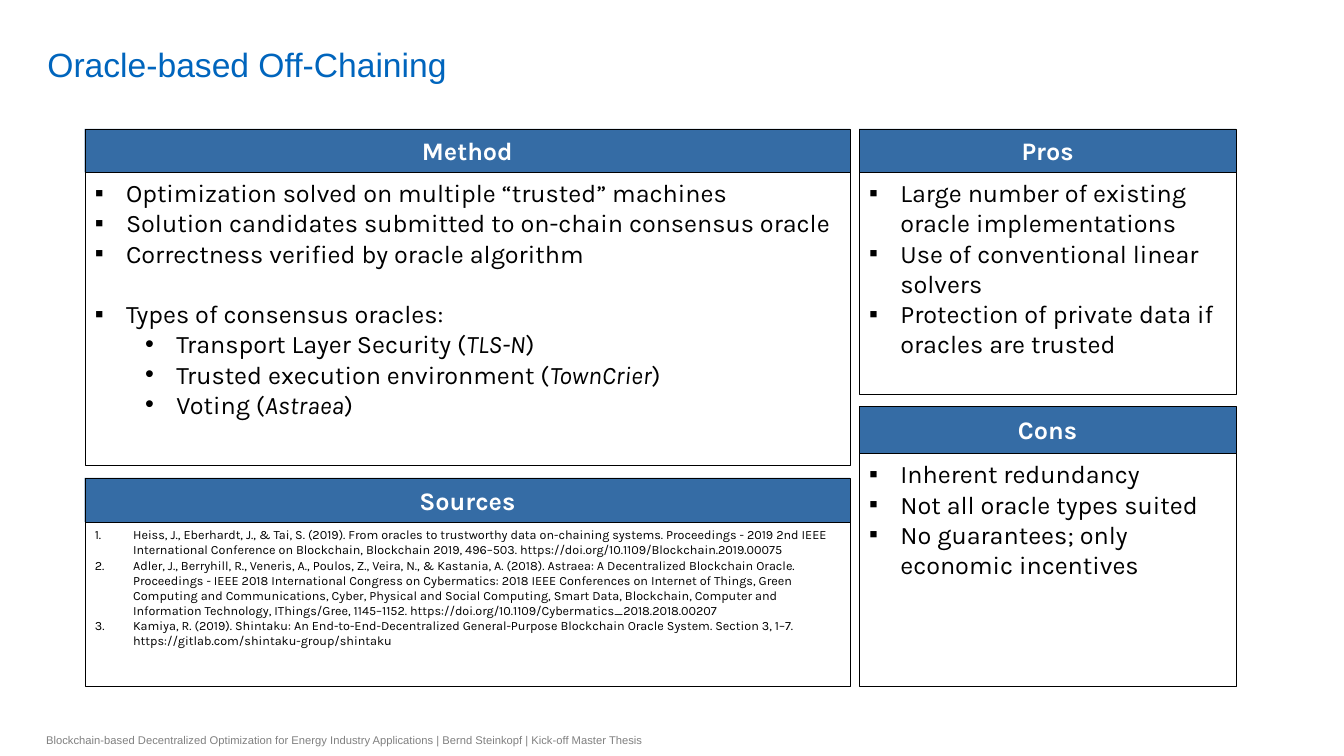
from lxml import etree
from pptx import Presentation, util as u
from pptx.dml.color import RGBColor
from pptx.enum import shapes, text
from pptx.oxml.ns import qn

PX = 9144  # EMU per px, at 100 px to the inch
COLORS = {"title": "0065BD", "header": "356CA5", "paper": "FFFFFF",
          "ink": "000000", "footer": "808080"}
MARGINS = {"margin_left": 10, "margin_right": 10, "margin_top": 5, "margin_bottom": 5}

# Paragraph styles: left indent and hanging indent in px, bullet element
STYLES = {
    "square": {"level": 0, "indent": 31, "hang": 31, "bullet": ("a:buChar", "char", "▪")},
    "dot": {"level": 1, "indent": 81, "hang": 31, "bullet": ("a:buChar", "char", "•")},
    "number": {"level": 0, "indent": 38, "hang": 38,
               "bullet": ("a:buAutoNum", "type", "arabicPeriod")},
}
LINE = 21.6  # height in points of one line of body text

# Each item: style, text with *italics*, space before in points
METHOD = [
    ("square", "Optimization solved on multiple “trusted” machines", 0),
    ("square", "Solution candidates submitted to on-chain consensus oracle", 0),
    ("square", "Correctness verified by oracle algorithm", 0),
    ("square", "Types of consensus oracles:", LINE),
    ("dot", "Transport Layer Security (*TLS-N*)", 0),
    ("dot", "Trusted execution environment (*TownCrier*)", 0),
    ("dot", "Voting (*Astraea*)", 0),
]
SOURCES = [("number", entry, 0) for entry in (
    "Heiss, J., Eberhardt, J., & Tai, S. (2019). From oracles to trustworthy data "
    "on-chaining systems. Proceedings - 2019 2nd IEEE International Conference on "
    "Blockchain, Blockchain 2019, 496–503. https://doi.org/10.1109/Blockchain.2019.00075",
    "Adler, J., Berryhill, R., Veneris, A., Poulos, Z., Veira, N., & Kastania, A. (2018). "
    "Astraea: A Decentralized Blockchain Oracle. Proceedings - IEEE 2018 International "
    "Congress on Cybermatics: 2018 IEEE Conferences on Internet of Things, Green Computing "
    "and Communications, Cyber, Physical and Social Computing, Smart Data, Blockchain, "
    "Computer and Information Technology, IThings/Gree, 1145–1152. "
    "https://doi.org/10.1109/Cybermatics_2018.2018.00207",
    "Kamiya, R. (2019). Shintaku: An End-to-End-Decentralized General-Purpose Blockchain "
    "Oracle System. Section 3, 1–7. https://gitlab.com/shintaku-group/shintaku",
)]
PROS = [("square", entry, 0) for entry in (
    "Large number of existing oracle implementations",
    "Use of conventional linear solvers",
    "Protection of private data if oracles are trusted",
)]
CONS = [("square", entry, 0) for entry in (
    "Inherent redundancy",
    "Not all oracle types suited",
    "No guarantees; only economic incentives",
)]

# Panel grid: two columns (left, width), shared top and bottom
LEFT, RIGHT = (84, 759), (852, 374)
TOP, BOTTOM, GAP = 128, 681, 12
METHOD_END, PROS_END = 462, 391
# Each panel: placeholder, heading, column, top, bottom, header height, text size, items
PANELS = [
    (1, "Method", LEFT, TOP, METHOD_END, 43, 18, METHOD),
    (2, "Sources", LEFT, METHOD_END + GAP, BOTTOM, 44, 9, SOURCES),
    (3, "Pros", RIGHT, TOP, PROS_END, 43, 18, PROS),
    (4, "Cons", RIGHT, PROS_END + GAP, BOTTOM, 47, 18, CONS),
]


def assign(target, values):
    for name, value in values.items():
        setattr(target, name, value)


def emu(values):
    return {name: px * PX for name, px in values.items()}


def place(part, left, top, width, height):
    assign(part, emu({"left": left, "top": top, "width": width, "height": height}))


def add_run(paragraph, words, size, color, name, bold=False, italic=False):
    run = paragraph.add_run()
    run.text = words
    assign(run.font, {"size": u.Pt(size), "name": name, "bold": bold, "italic": italic})
    run.font.color.rgb = RGBColor.from_string(COLORS[color])


def format_frame(frame, anchor, margins=MARGINS):
    assign(frame, {"word_wrap": True, "auto_size": text.MSO_AUTO_SIZE.NONE,
                   "vertical_anchor": anchor, **emu(margins)})


def paint(part, fill):
    part.fill.solid()
    part.fill.fore_color.rgb = RGBColor.from_string(COLORS[fill])
    part.line.color.rgb = RGBColor.from_string(COLORS["ink"])
    part.line.width = u.Pt(0.25)


def fill_list(frame, items, size):
    for number, (style_name, words, before) in enumerate(items):
        paragraph = frame.add_paragraph() if number else frame.paragraphs[0]
        style = STYLES[style_name]
        tag, attribute, value = style["bullet"]
        properties = paragraph._p.get_or_add_pPr()
        properties.set("marL", str(style["indent"] * PX))
        properties.set("indent", str(-style["hang"] * PX))
        if tag == "a:buChar":
            etree.SubElement(properties, qn("a:buFont")).set("typeface", "Arial")
        etree.SubElement(properties, qn(tag)).set(attribute, value)
        assign(paragraph, {"level": style["level"], "alignment": text.PP_ALIGN.LEFT,
                           "space_before": u.Pt(before), "space_after": u.Pt(0)})
        for position, piece in enumerate(words.split("*")):
            if piece:
                add_run(paragraph, piece, size, "ink", "Karla", italic=position % 2 == 1)


def add_panel(slide, body, heading, box, header_height, size, items):
    left, top, width, height = box
    # Header bar
    header = slide.shapes.add_shape(shapes.MSO_SHAPE.RECTANGLE, 0, 0, 0, 0)
    place(header, left, top, width, header_height)
    header.shadow.inherit = False
    paint(header, "header")
    format_frame(header.text_frame, text.MSO_ANCHOR.MIDDLE)
    caption = header.text_frame.paragraphs[0]
    caption.alignment = text.PP_ALIGN.CENTER
    add_run(caption, heading, 18, "paper", "Karla", bold=True)
    # List below the header
    place(body, left, top + header_height, width, height - header_height)
    paint(body, "paper")
    format_frame(body.text_frame, text.MSO_ANCHOR.TOP)
    fill_list(body.text_frame, items, size)


def add_title(slide, box):
    title = slide.shapes.title
    place(title, *box)
    format_frame(title.text_frame, text.MSO_ANCHOR.BOTTOM,
                 {**MARGINS, "margin_top": 0, "margin_bottom": 0})
    heading = title.text_frame.paragraphs[0]
    heading.alignment = text.PP_ALIGN.LEFT
    add_run(heading, "Oracle-based Off-Chaining", 24, "title", "Arial")


def add_footer(slide, box):
    footer = slide.shapes.add_textbox(0, 0, 0, 0)
    place(footer, *box)
    format_frame(footer.text_frame, text.MSO_ANCHOR.MIDDLE)
    add_run(footer.text_frame.paragraphs[0],
            "Blockchain-based Decentralized Optimization for Energy Industry Applications"
            " | Bernd Steinkopf | Kick-off Master Thesis", 8, "footer", "Arial")


def main():
    deck = Presentation()
    assign(deck, emu({"slide_width": 1333, "slide_height": 750}))
    slide = deck.slides.add_slide(deck.slide_layouts.get_by_name("Comparison"))
    bodies = {body.placeholder_format.idx: body for body in slide.placeholders}
    add_title(slide, (37, 5, 1158, 79))
    for idx, heading, (left, width), top, bottom, header_height, size, items in PANELS:
        add_panel(slide, bodies[idx], heading, (left, top, width, bottom - top),
                  header_height, size, items)
    add_footer(slide, (36, 718, 630, 32))
    deck.save("out.pptx")


if __name__ == "__main__":
    main()
